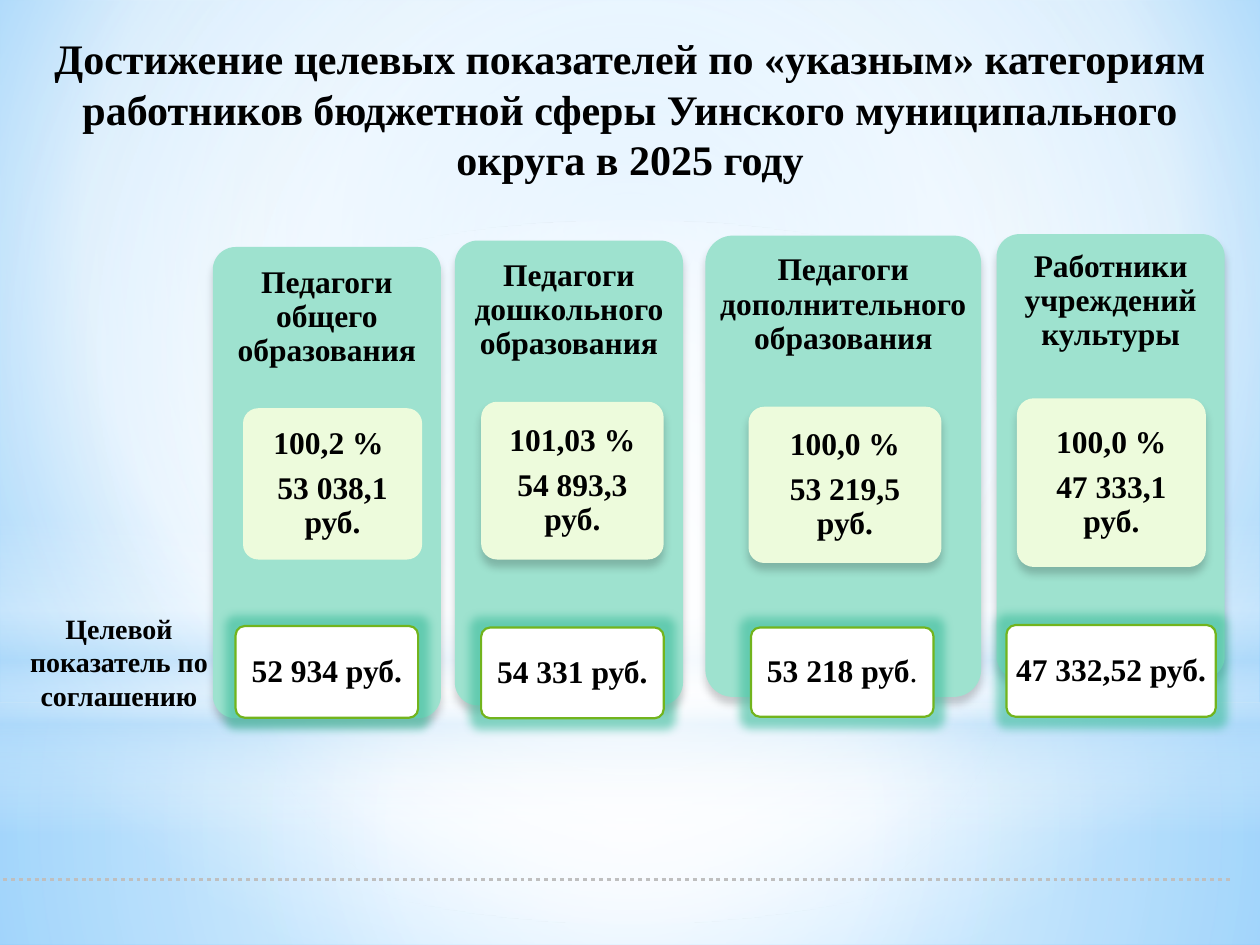
from pptx import Presentation
from pptx import util as u
from pptx.dml.color import RGBColor
from pptx.enum import dml, shapes, text
from pptx.oxml import parse_xml
from pptx.oxml.ns import nsdecls, qn

COLORS = {
    "ink": "000000",
    "white": "FFFFFF",
    "card": "9EE2CF",
    "value": "EDFBDC",
    "border": "72B41D",
    "glow": "3DBD9C",
    "rule": "BFBFBF",
    "sky": "B4DCFA",
    "sky_mid": "9ED5FF",
    "sky_edge": "5BB9FF",
}
FONT = "Times New Roman"

# Each box is (left, top, width, height) in cm; value and target are relative to the card
CARDS = [
    dict(box=(4.29, 4.98, 4.6, 9.5), heading="Педагоги общего образования",
         value_box=(0.61, 3.25, 3.61, 3.05), value=["100,2 % ", "53 038,1 руб."],
         target_box=(0.46, 7.64, 3.68, 1.85), target="52 934 руб.", raised=False),
    dict(box=(9.17, 4.85, 4.6, 9.37), heading="Педагоги дошкольного образования",
         value_box=(0.53, 3.25, 3.68, 3.18), value=["101,03 %", "54 893,3 руб."],
         target_box=(0.53, 7.8, 3.68, 1.83), target="54 331 руб."),
    dict(box=(14.22, 4.75, 5.56, 9.3), heading="Педагоги дополнительного образования",
         value_box=(0.87, 3.45, 3.89, 3.15), value=["100,0 %", "53 219,5 руб."],
         target_box=(0.92, 7.9, 3.68, 1.8), target="53 218 руб", ending="."),
    dict(box=(20.09, 4.72, 4.6, 8.97), heading="Работники учреждений культуры",
         value_box=(0.41, 3.31, 3.81, 3.4), value=["100,0 %", "47 333,1 руб."],
         target_box=(0.2, 7.88, 4.22, 1.85), target="47 332,52 руб."),
]


def rgb(name):
    return RGBColor.from_string(COLORS[name])


def cm(box):
    return [u.Cm(length) for length in box]


def inside(outer, inner):
    return outer[0] + inner[0], outer[1] + inner[1], inner[2], inner[3]


def add_run(paragraph, words, size=18, bold=True):
    run = paragraph.add_run()
    run.text = words
    run.font.name = FONT
    run.font.size = u.Pt(size)
    run.font.bold = bold
    run.font.color.rgb = rgb("ink")


def write(shape, lines, size=18, insets=(0.13, 0.1), anchor=text.MSO_ANCHOR.MIDDLE,
          spacing=0.9, after=6.3, wrap=True):
    """Fill a shape with centred paragraphs."""
    frame = shape.text_frame
    frame.word_wrap = wrap
    frame.auto_size = text.MSO_AUTO_SIZE.NONE
    frame.vertical_anchor = anchor
    frame.margin_left = frame.margin_right = u.Cm(insets[0])
    frame.margin_top = frame.margin_bottom = u.Cm(insets[1])
    for number, line in enumerate(lines):
        paragraph = frame.add_paragraph() if number else frame.paragraphs[0]
        paragraph.alignment = text.PP_ALIGN.CENTER
        paragraph.line_spacing = spacing
        paragraph.space_before = u.Pt(0)
        paragraph.space_after = u.Pt(after)
        add_run(paragraph, line, size)
    return frame


def add_panel(slide, kind, box, fill, line=None):
    panel = slide.shapes.add_shape(kind, *cm(box))
    panel.shadow.inherit = False
    panel.fill.solid()
    panel.fill.fore_color.rgb = rgb(fill)
    if line:
        panel.line.color.rgb = rgb(line)
        panel.line.width = u.Pt(1.25)
    else:
        panel.line.fill.background()
    return panel


def add_rounded(slide, box, fill, line=None):
    panel = add_panel(slide, shapes.MSO_SHAPE.ROUNDED_RECTANGLE, box, fill, line)
    panel.adjustments[0] = 0.1
    return panel


def add_effect(shape, tag, color, opacity, **attributes):
    settings = " ".join(f'{key}="{value}"' for key, value in attributes.items())
    effect = parse_xml(
        f'<a:{tag} {nsdecls("a")} {settings}><a:srgbClr val="{COLORS[color]}">'
        f'<a:alpha val="{opacity * 1000}"/></a:srgbClr></a:{tag}>')
    shape._element.spPr.find(qn("a:effectLst")).append(effect)


def drop_shadow(shape):
    add_effect(shape, "outerShdw", "ink", 20, blurRad=u.Pt(5), dist=u.Pt(4),
               dir=5400000, rotWithShape=0)


def paint_gradient(properties, stops, focus=None):
    """Replace a solid fill by stops of (position, colour, opacity); no focus means downwards."""
    marks = "".join(
        f'<a:gs pos="{position * 1000}"><a:srgbClr val="{COLORS[color]}">'
        f'<a:alpha val="{opacity * 1000}"/></a:srgbClr></a:gs>'
        for position, color, opacity in stops)
    if focus:
        sides = " ".join(f'{side}="{part * 1000}"' for side, part in zip("ltrb", focus))
        course = f'<a:path path="circle"><a:fillToRect {sides}/></a:path>'
    else:
        course = '<a:lin ang="5400000" scaled="0"/>'
    gradient = parse_xml(f'<a:gradFill {nsdecls("a")} rotWithShape="1">'
                         f'<a:gsLst>{marks}</a:gsLst>{course}</a:gradFill>')
    properties.replace(properties.find(qn("a:solidFill")), gradient)


def add_backdrop(slide):
    slide.background.fill.solid()
    paint_gradient(slide._element.cSld.bg.bgPr,
                   [(0, "sky_mid", 100), (69, "white", 100), (100, "sky_edge", 100)],
                   (20, 10, 20, 60))
    rectangle, oval = shapes.MSO_SHAPE.RECTANGLE, shapes.MSO_SHAPE.OVAL
    centre = (50, 50, 50, 50)
    layers = [
        (rectangle, (0, 14.17, 25.4, 4.88), centre,
         [(0, "white", 91), (37, "white", 76), (100, "sky", 79)]),
        (rectangle, (0, 0, 25.4, 14.17), centre,
         [(0, "white", 89), (48, "white", 62), (100, "sky", 79)]),
        (rectangle, (0, 10.46, 25.4, 6.35), None,
         [(0, "white", 0), (29, "white", 30), (45, "sky", 40),
          (55, "white", 26), (65, "sky", 60), (100, "white", 0)]),
        (oval, (0, 4.45, 25.4, 14.17), centre, [(0, "white", 100), (56, "white", 0)]),
    ]
    for kind, box, focus, stops in layers:
        layer = add_panel(slide, kind, box, "white")
        paint_gradient(layer._element.spPr, stops, focus)


def place_title(slide, box):
    title = slide.shapes.title
    title.left, title.top, title.width, title.height = cm(box)
    write(title, ["Достижение целевых показателей по «указным» категориям работников "
                  "бюджетной сферы Уинского муниципального округа в 2025 году"],
          size=24, insets=(0.25, 0.13), anchor=text.MSO_ANCHOR.TOP, spacing=1, after=0)
    slide.shapes._spTree.append(title._element)  # in front of the backdrop


def add_card(slide, box, heading, value_box, value, target_box, target, ending="", raised=True):
    drop_shadow(add_rounded(slide, box, "card"))

    # Heading fills the top 30 % of the card
    left, top, width, height = box
    caption = slide.shapes.add_textbox(*cm((left, top, width, 0.3 * height)))
    write(caption, [heading], insets=(0.18, 0.18))

    # Achieved level
    achieved = add_rounded(slide, inside(box, value_box), "value")
    write(achieved, value)
    if raised:
        drop_shadow(achieved)

    # Agreed target
    agreed = add_rounded(slide, inside(box, target_box), "white", "border")
    add_effect(agreed, "glow", "glow", 60, rad=u.Pt(11))
    frame = write(agreed, [target], wrap=False)
    if ending:
        add_run(frame.paragraphs[0], ending, bold=False)


def add_footer_rule(slide, left, right, y):
    rule = slide.shapes.add_connector(shapes.MSO_CONNECTOR.STRAIGHT, *cm((left, y, right, y)))
    rule.line.color.rgb = rgb("rule")
    rule.line.width = u.Pt(2.25)
    rule.line.dash_style = dml.MSO_LINE.ROUND_DOT
    rule._element.spPr.append(parse_xml(f'<a:effectLst {nsdecls("a")}/>'))


def add_target_label(slide, box):
    label = slide.shapes.add_textbox(*cm(box))
    write(label, ["Целевой показатель по соглашению"], size=16, insets=(0, 0),
          anchor=text.MSO_ANCHOR.TOP, spacing=1, after=0)


def main():
    deck = Presentation()
    deck.slide_width, deck.slide_height = u.Cm(25.4), u.Cm(19.05)
    slide = deck.slides.add_slide(deck.slide_layouts[5])
    add_backdrop(slide)
    place_title(slide, (0.3, 0.53, 24.8, 2.8))
    for card in CARDS:
        add_card(slide, **card)
    add_footer_rule(slide, -0.25, 24.79, 17.73)
    add_target_label(slide, (0.2, 12.32, 4.4, 2.06))
    deck.save("out.pptx")


if __name__ == "__main__":
    main()
